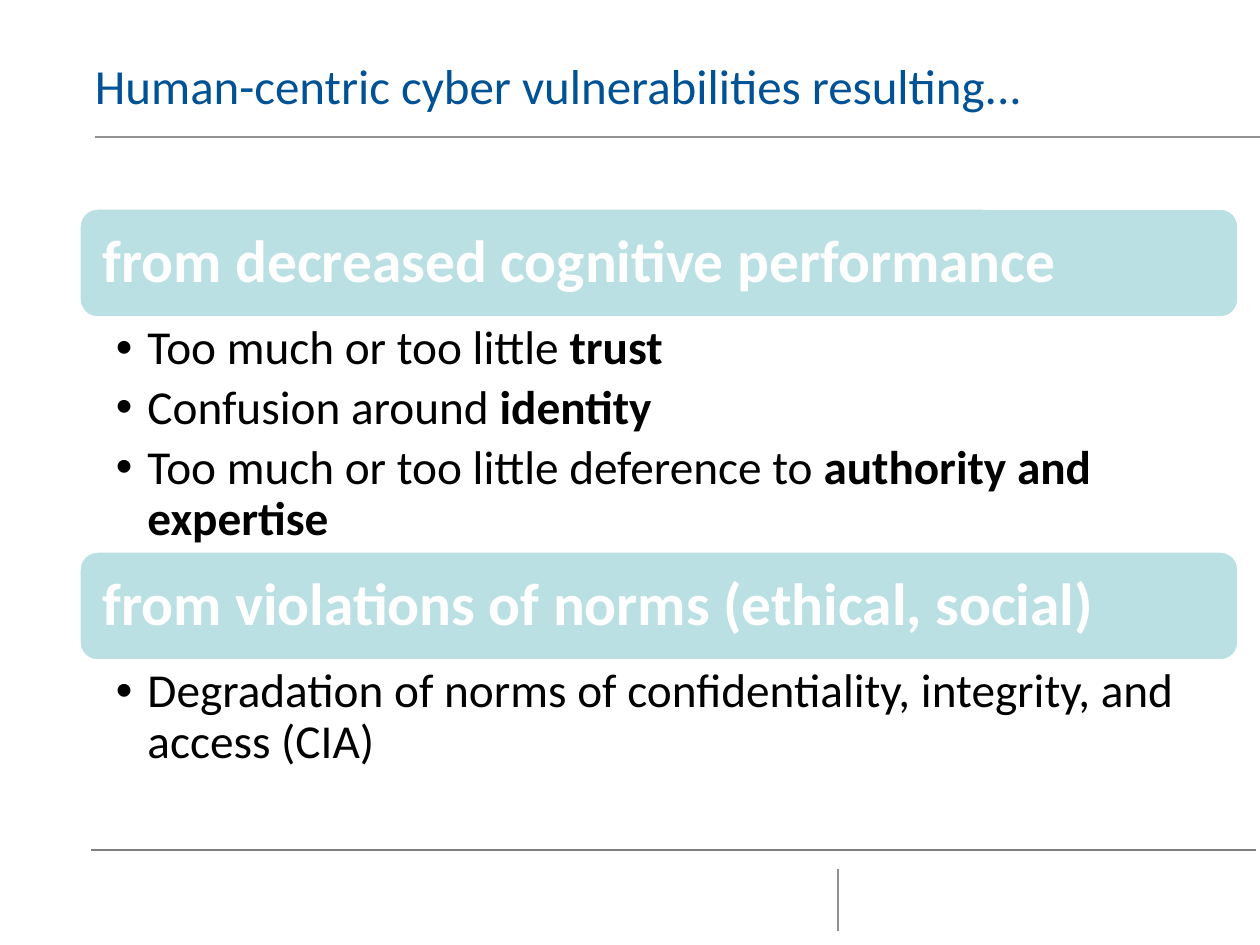
from lxml import etree
from pptx import Presentation, util as u
from pptx.dml.color import RGBColor
from pptx.enum import shapes, text
from pptx.oxml.ns import qn

EMU_PER_PX = 914400 / 126
LEFT, WIDTH, BANNER_HEIGHT = 79, 1160, 110
RULES = [
    (91, 850, 1256, 850, "808080"),
    (95, 137, 1260, 137, "919194"),
    (838, 931, 838, 869, "919194"),
]
SECTIONS = [
    ("from decreased cognitive performance", 233, [
        ("Too much or too little ", "trust"),
        ("Confusion around ", "identity"),
        ("Too much or too little deference to ", "authority and expertise"),
    ]),
    ("from violations of norms (ethical, social)", 112, [
        ("Degradation of norms of confidentiality, integrity, and access (CIA)", ""),
    ]),
]


def px(*lengths):
    """Turn pixel lengths into a list of EMU lengths."""
    return [u.Emu(round(length * EMU_PER_PX)) for length in lengths]


def color(value):
    """Turn a hex string into a colour."""
    return RGBColor.from_string(value)


def set_frame(shape, margins, anchor=text.MSO_ANCHOR.TOP):
    """Set wrapping, margins and anchor, and return the text frame."""
    frame = shape.text_frame
    frame.word_wrap = True
    frame.vertical_anchor = anchor
    (frame.margin_left, frame.margin_top,
     frame.margin_right, frame.margin_bottom) = px(*margins)
    return frame


def style(para, size, fill, spacing, bold=None):
    """Set the font, line spacing and left alignment of a paragraph."""
    para.font.name = "Calibri"
    para.font.size = u.Pt(size)
    para.font.color.rgb = color(fill)
    para.font.bold = bold
    para.line_spacing = spacing
    para.alignment = text.PP_ALIGN.LEFT


def add_rule(page, x1, y1, x2, y2, fill):
    """Draw a thin straight line."""
    rule = page.shapes.add_connector(shapes.MSO_CONNECTOR.STRAIGHT, *px(x1, y1, x2, y2))
    rule.line.color.rgb = color(fill)
    rule.line.width = u.Pt(1)
    etree.SubElement(rule._element.spPr, qn("a:effectLst"))


def add_title(page, wording):
    """Add the slide heading."""
    box = page.shapes.add_textbox(*px(95, 58, 1087, 131))
    para = set_frame(box, (0, 0, 0, 0)).paragraphs[0]
    para.text = wording
    style(para, 28, "005295", u.Pt(32))


def add_banner(page, top, wording):
    """Add a rounded section heading."""
    banner = page.shapes.add_shape(
        shapes.MSO_SHAPE.ROUNDED_RECTANGLE, *px(LEFT, top, WIDTH, BANNER_HEIGHT))
    banner.shadow.inherit = False
    banner.fill.solid()
    banner.fill.fore_color.rgb = color("BBE0E3")
    banner.line.color.rgb = color("FFFFFF")
    banner.line.width = u.Pt(2)
    para = set_frame(banner, (18, 18, 18, 18), text.MSO_ANCHOR.MIDDLE).paragraphs[0]
    para.text = wording
    style(para, 34, "FFFFFF", 0.9, True)


def add_bullets(page, top, height, items):
    """Add a bulleted list whose items end in bold words."""
    box = page.shapes.add_textbox(*px(LEFT, top, WIDTH, height))
    frame = set_frame(box, (37, 6, 33, 6))
    for index, (plain, strong) in enumerate(items):
        para = frame.add_paragraph() if index else frame.paragraphs[0]
        props = para._p.get_or_add_pPr()
        props.set("marL", str(u.Inches(0.25)))
        props.set("indent", str(-u.Inches(0.25)))
        etree.SubElement(props, qn("a:buFont"), typeface="Arial")
        etree.SubElement(props, qn("a:buChar"), char="•")
        style(para, 27, "000000", 0.9)
        para.space_after = u.Pt(5)
        para.add_run().text = plain
        if strong:
            span = para.add_run()
            span.text = strong
            span.font.bold = True


def main():
    """Build the slide and save it."""
    deck = Presentation()
    deck.slide_width, deck.slide_height = px(1260, 945)
    page = deck.slides.add_slide(deck.slide_layouts[6])
    for rule in RULES:
        add_rule(page, *rule)
    add_title(page, "Human-centric cyber vulnerabilities resulting...")
    top = 208
    for heading, height, items in SECTIONS:
        add_banner(page, top, heading)
        add_bullets(page, top + BANNER_HEIGHT, height, items)
        top += BANNER_HEIGHT + height
    deck.save("out.pptx")


if __name__ == "__main__":
    main()
